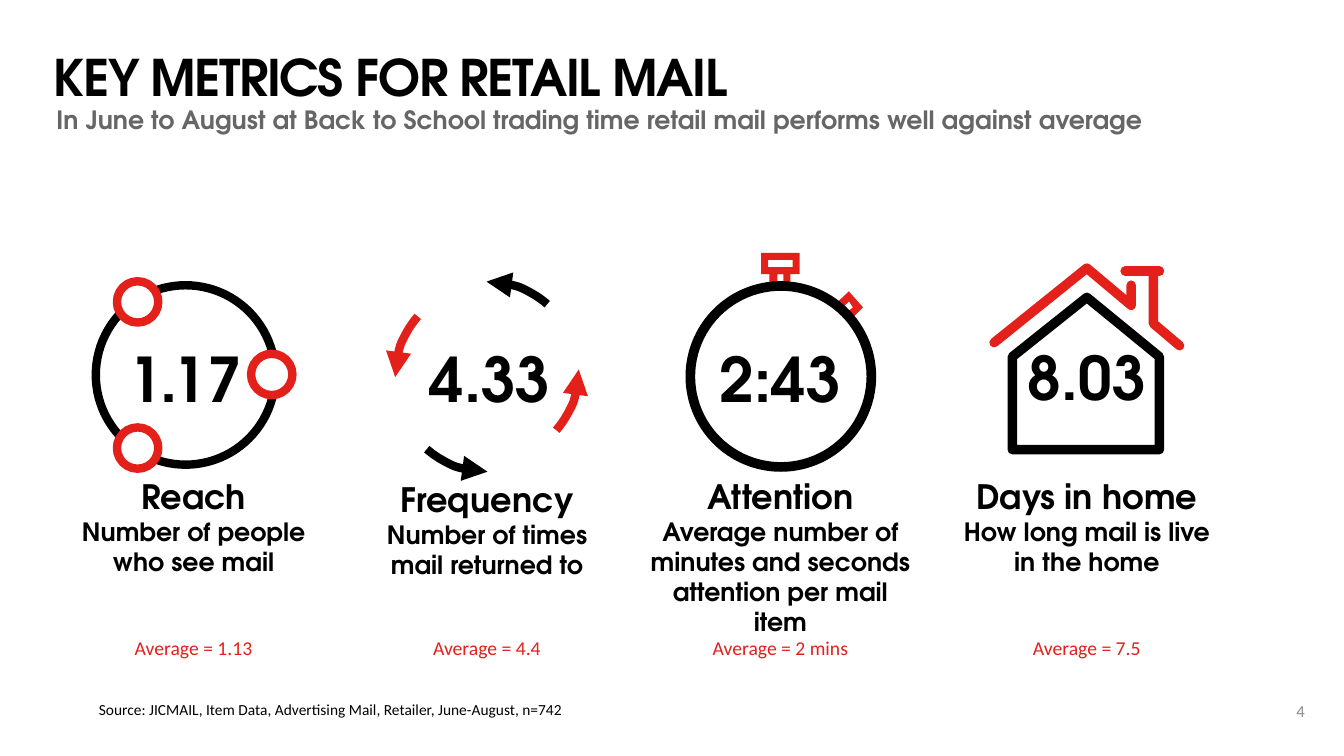
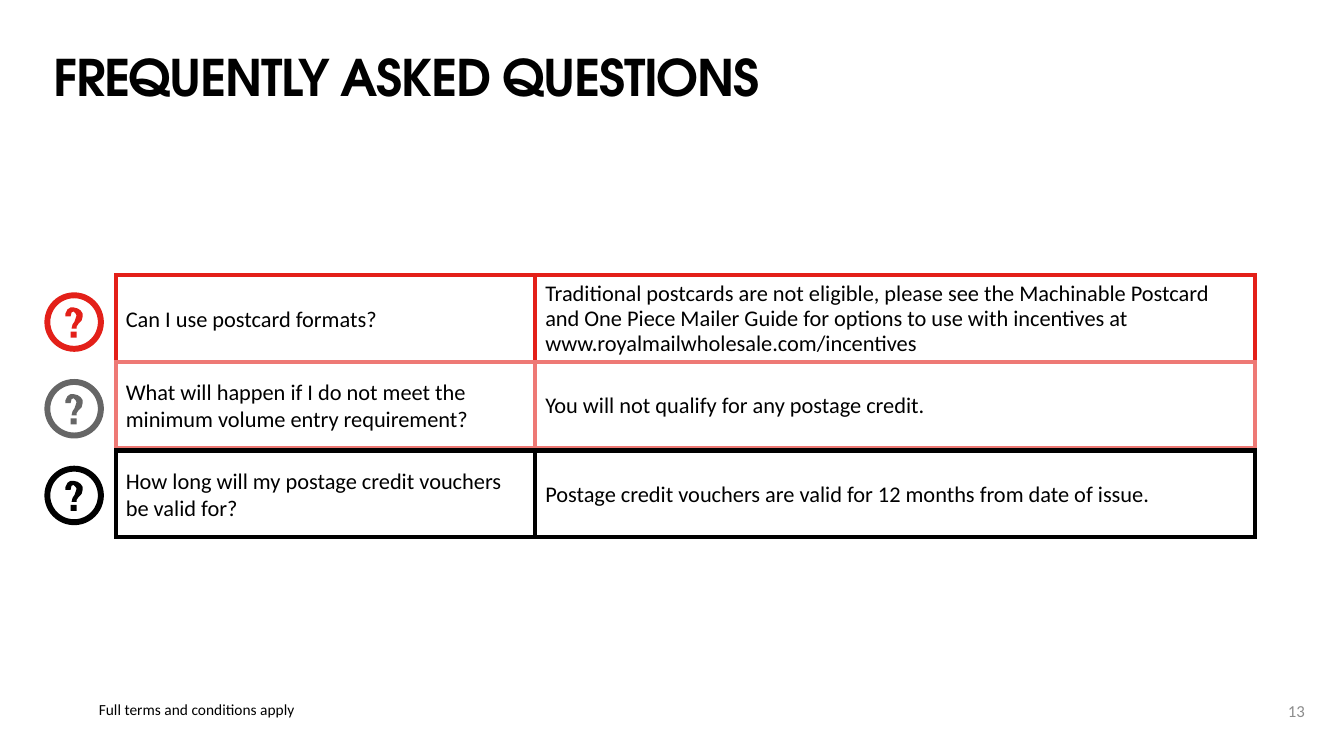
from lxml.etree import SubElement
from pptx import Presentation
from pptx.dml.color import RGBColor
from pptx.enum.shapes import MSO_SHAPE as Shape
from pptx.enum.text import MSO_ANCHOR as Anchor, MSO_AUTO_SIZE as AutoSize, PP_ALIGN as Align
from pptx.oxml.ns import qn
from pptx.util import Inches, Pt

RED, PINK, GREY, BLACK, WHITE = "E32019", "EE7975", "666666", "000000", "FFFFFF"
HEADING, BODY = "TeX Gyre Adventor", "Calibri"
rgb = RGBColor.from_string


def paint(shape, fill=None, line=None, width=6):
    shape.shadow.inherit = False
    if fill:
        shape.fill.solid()
        shape.fill.fore_color.rgb = rgb(fill)
    else:
        shape.fill.background()
    if line:
        shape.line.color.rgb = rgb(line)
        shape.line.width = Pt(width)
    else:
        shape.line.fill.background()


def write(box, lines, color=BLACK, font=BODY, align=Align.LEFT, anchor=Anchor.TOP,
          inset=(0.1, 0.05), wrap=True, spacing=1.0):
    frame = box.text_frame
    frame.auto_size = AutoSize.NONE
    frame.word_wrap = wrap
    frame.vertical_anchor = anchor
    frame.margin_left = frame.margin_right = Inches(inset[0])
    frame.margin_top = frame.margin_bottom = Inches(inset[1])
    for index, (text, size) in enumerate(lines):
        para = frame.add_paragraph() if index else frame.paragraphs[0]
        para.text = text
        if box.is_placeholder:
            props = para._p.get_or_add_pPr()
            props.set("marL", "0")
            props.set("indent", "0")
            SubElement(props, qn("a:buNone"))
        para.alignment = align
        para.space_before = Pt(0)
        para.line_spacing = spacing
        para.font.name = font
        para.font.size = Pt(size)
        para.font.bold = font == HEADING
        para.font.color.rgb = rgb(color)


deck = Presentation()
deck.slide_width, deck.slide_height = Inches(13.33), Inches(7.5)

# Shared title, footer and page number
pages = [
    ("Two Content", "KEY METRICS FOR RETAIL MAIL", "4",
     "Source: JICMAIL, Item Data, Advertising Mail, Retailer, June-August, n=742"),
    ("Title and Content", "FREQUENTLY ASKED QUESTIONS", "13",
     "Full terms and conditions apply"),
]
for layout, heading, number, note in pages:
    page = deck.slides.add_slide(deck.slide_layouts.get_by_name(layout))
    title, footer = page.shapes.title, list(page.placeholders)[-1]
    title.left, title.top = Inches(0.53), Inches(0.45)
    title.width, title.height = Inches(11.01), Inches(0.52)
    write(title, [(heading, 36)], font=HEADING, inset=(0, 0), spacing=Pt(44))
    title.text_frame.paragraphs[0].font._rPr.set("spc", "-100")
    footer.left, footer.top = Inches(0.88), Inches(6.97)
    footer.width, footer.height = Inches(5.7), Inches(0.15)
    write(footer, [(note, 11)], inset=(0.1, 0), spacing=0.9)
    box = page.shapes.add_textbox(Inches(12.63), Inches(6.85), Inches(0.41), Inches(0.4))
    write(box, [(number, 12)], "8C8C8C", align=Align.RIGHT, anchor=Anchor.MIDDLE)

metrics_page, faq_page = deck.slides

# Metrics: subtitle
shapes = metrics_page.shapes
subtitle = metrics_page.placeholders[1]
subtitle.left, subtitle.top = Inches(0.56), Inches(1.07)
subtitle.width, subtitle.height = Inches(10.98), Inches(0.31)
write(subtitle, [("In June to August at Back to School trading time retail mail "
                  "performs well against average", 18)],
      GREY, HEADING, inset=(0, 0), spacing=0.9)

# Frequency icon: four arrows turning around the number
for turn, color in enumerate([RED, BLACK, RED, BLACK]):
    arc = shapes.add_shape(Shape.ARC, Inches(3.92), Inches(2.76 + turn * 0.1 / 3),
                           Inches(1.82), Inches(1.82))
    arc.adjustments[0], arc.adjustments[1] = 137.94 * 0.6, 179.25 * 0.6
    arc.rotation = (179 - 90 * turn) % 360
    arc._element.spPr.xfrm.set("flipV", "1")
    paint(arc, line=color)
    SubElement(arc.line._get_or_add_ln(), qn("a:tailEnd"), type="triangle")

# Reach icon: a ring with three nodes
for left, top, size, fill, color in [(0.95, 2.83, 1.78, None, BLACK),
                                     (1.16, 2.79, 0.41, WHITE, RED),
                                     (1.16, 4.24, 0.41, WHITE, RED),
                                     (2.49, 3.51, 0.41, WHITE, RED)]:
    circle = shapes.add_shape(Shape.OVAL, Inches(left), Inches(top), Inches(size), Inches(size))
    paint(circle, fill, color)

# Attention icon: stopwatch button, stem, crown and dial
button = [(8.44, 3.17), (8.38, 3.11), (8.46, 3.05), (8.42, 2.99),
          (8.34, 3.07), (8.28, 3.02), (8.42, 2.89), (8.56, 3.05)]
stem = [(7.84, 2.83), (7.77, 2.83), (7.77, 2.72), (7.71, 2.72),
        (7.71, 2.83), (7.63, 2.83), (7.63, 2.65), (7.84, 2.65)]
for points in (button, stem):
    corners = [(Inches(x), Inches(y)) for x, y in points]
    builder = shapes.build_freeform(*corners[0])
    builder.add_line_segments(corners[1:])
    paint(builder.convert_to_shape(), RED)
crown = shapes.add_shape(Shape.FRAME, Inches(7.55), Inches(2.51), Inches(0.38), Inches(0.21))
crown.adjustments[0] = 0.33
paint(crown, RED)
dial = shapes.add_shape(Shape.DONUT, Inches(6.81), Inches(2.8), Inches(1.87), Inches(1.87))
dial.adjustments[0] = 0.04
paint(dial, BLACK, BLACK, 1.5)

# Days icon: house strokes with round ends
walls = [(10.04, 3.54), (10.04, 4.46), (11.5, 4.46), (11.5, 3.54), (10.78, 2.95)]
roof = [(9.86, 3.4), (10.78, 2.66), (11.22, 3.03), (11.22, 2.83)]
chimney = [(11.44, 2.73), (11.44, 3.21), (11.7, 3.43)]
chimney_top = [(11.16, 2.69), (11.5, 2.69)]
for points, color in [(chimney, RED), (roof, RED), (chimney_top, RED), (walls, BLACK)]:
    corners = [(Inches(x), Inches(y)) for x, y in points]
    builder = shapes.build_freeform(*corners[0])
    builder.add_line_segments(corners[1:], close=points is walls)
    stroke = builder.convert_to_shape()
    paint(stroke, line=color, width=6.8)
    outline = stroke.line._get_or_add_ln()
    outline.set("cap", "rnd")
    SubElement(outline, qn("a:round"))

# Metric numbers, captions and averages, centred on each column
metrics = [
    (1.92, 1.84, 4.67, "1.17", 44, "Reach", "Number of people who see mail", "1.13"),
    (4.83, 4.86, 4.7, "4.33", 44, "Frequency", "Number of times mail returned to", "4.4"),
    (7.74, 7.74, 4.67, "2:43", 44, "Attention",
     "Average number of minutes and seconds attention per mail item", "2 mins"),
    (10.78, 10.78, 4.67, "8.03", 43, "Days in home", "How long mail is live in the home", "7.5"),
]
for center, number_center, top, value, size, name, meaning, average in metrics:
    width = 2.58 if name == "Frequency" else 2.83
    box = shapes.add_textbox(Inches(center - width / 2), Inches(top), Inches(width), Inches(1.11))
    write(box, [(name, 24), (meaning, 18)], font=HEADING, align=Align.CENTER)
    box = shapes.add_textbox(Inches(number_center - 0.7), Inches(3.33), Inches(1.4), Inches(0.84))
    write(box, [(value, size)], font=HEADING, align=Align.CENTER, wrap=False)
    box = shapes.add_textbox(Inches(center - 0.8), Inches(6.26), Inches(1.6), Inches(0.34))
    write(box, [(f"Average = {average}", 14)], RED, align=Align.CENTER, wrap=False)

# Questions: framed question and answer, with a question mark icon
shapes = faq_page.shapes
questions = [
    (2.73, RED, RED, "Can I use postcard formats?",
     "Traditional postcards are not eligible, please see the Machinable Postcard and One Piece "
     "Mailer Guide for options to use with incentives at www.royalmailwholesale.com/incentives"),
    (3.59, PINK, GREY, "What will happen if I do not meet the minimum volume entry requirement?",
     "You will not qualify for any postage credit."),
    (4.47, BLACK, BLACK, "How long will my postage credit vouchers be valid for?",
     "Postage credit vouchers are valid for 12 months from date of issue."),
]
# Hook of the question mark, measured from the icon's top left corner
hook = [(0.27, 0.36), (0.28, 0.32), (0.3, 0.29), (0.31, 0.26), (0.32, 0.23), (0.31, 0.21),
        (0.29, 0.19), (0.27, 0.2), (0.26, 0.24), (0.21, 0.24), (0.21, 0.21), (0.23, 0.17),
        (0.26, 0.15), (0.29, 0.15), (0.33, 0.16), (0.36, 0.18), (0.38, 0.21), (0.38, 0.24),
        (0.37, 0.28), (0.34, 0.31), (0.32, 0.34), (0.32, 0.36)]
for row, (top, frame_color, icon_color, question, answer) in enumerate(questions):
    for left, width, text, spacing in [(1.15, 4.16, question, 1.0), (5.31, 7.14, answer, Pt(18))]:
        cell = shapes.add_shape(Shape.RECTANGLE, Inches(left), Inches(top),
                                Inches(width), Inches(0.86))
        paint(cell, line=frame_color, width=3)
        SubElement(cell.line._get_or_add_ln(), qn("a:miter"), lim="800000")
        write(cell, [(text, 16)], anchor=Anchor.MIDDLE, spacing=spacing)

    icon_left, icon_top = 0.44, 2.9 + 0.86 * row
    ring = shapes.add_shape(Shape.DONUT, Inches(icon_left), Inches(icon_top),
                            Inches(0.59), Inches(0.59))
    ring.adjustments[0] = 0.1
    dot = shapes.add_shape(Shape.RECTANGLE, Inches(icon_left + 0.26), Inches(icon_top + 0.39),
                           Inches(0.06), Inches(0.06))
    corners = [(Inches(icon_left + x), Inches(icon_top + y)) for x, y in hook]
    builder = shapes.build_freeform(*corners[0])
    builder.add_line_segments(corners[1:])
    for part in (ring, dot, builder.convert_to_shape()):
        paint(part, icon_color)

deck.save("out.pptx")
